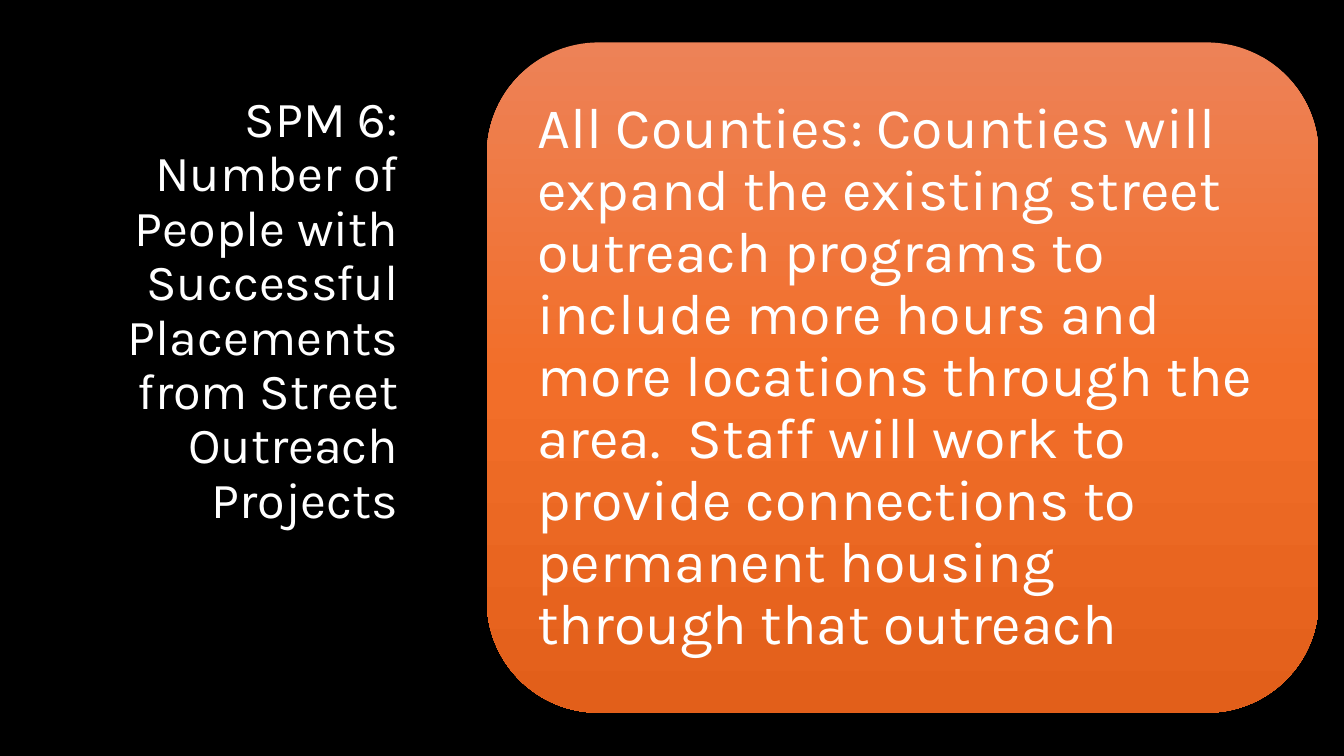
from copy import deepcopy
from dataclasses import dataclass

from pptx import Presentation
from pptx.dml.color import RGBColor
from pptx.enum.shapes import MSO_SHAPE
from pptx.enum.text import MSO_ANCHOR, PP_ALIGN
from pptx.oxml.ns import qn
from pptx.slide import Slide
from pptx.util import Cm, Pt

ROUNDED_RECTANGLE = MSO_SHAPE.ROUNDED_RECTANGLE
BOTTOM, MIDDLE = MSO_ANCHOR.BOTTOM, MSO_ANCHOR.MIDDLE
LEFT, RIGHT = PP_ALIGN.LEFT, PP_ALIGN.RIGHT
BLANK_LAYOUT = 6


@dataclass(frozen=True)
class Theme:
    font: str = "Karla"
    background: str = "000000"
    text: str = "FFFFFF"
    card: tuple[str, ...] = ("ED8257", "F26E29", "E25F1A")
    title_size: int = 36
    body_size: int = 41
    line_spacing: float = 0.9


@dataclass(frozen=True)
class Box:
    left: float
    top: float
    width: float
    height: float

    def lengths(self) -> tuple[Cm, Cm, Cm, Cm]:
        return Cm(self.left), Cm(self.top), Cm(self.width), Cm(self.height)


@dataclass(frozen=True)
class TextBlock:
    text: str
    box: Box
    size: int
    alignment: PP_ALIGN
    anchor: MSO_ANCHOR
    side_margin: float
    top_margin: float
    bottom_margin: float


THEME = Theme()
CARD = Box(12.27, 1.07, 20.96, 16.89)
TEXT_BLOCKS = (
    TextBlock(
        "SPM 6: Number of People with Successful Placements from Street Outreach Projects",
        Box(0.99, 4.83, 9.3, 10.01),
        THEME.title_size, RIGHT, BOTTOM, 0.25, 0.13, 1.5,
    ),
    TextBlock(
        "All Counties: Counties will expand the existing street outreach programs "
        "to include more hours and more locations through the area.  Staff will work "
        "to provide connections to permanent housing through that outreach",
        Box(13.11, 1.91, 19.3, 15.24),
        THEME.body_size, LEFT, MIDDLE, 0.43, 0.43, 0.43,
    ),
)


def draw_card(slide: Slide, box: Box) -> None:
    shape = slide.shapes.add_shape(ROUNDED_RECTANGLE, *box.lengths())
    shape.shadow.inherit = False
    shape.line.fill.background()
    shape.fill.gradient()
    shape.fill.gradient_angle = 270
    stop_list = shape._element.spPr.find(qn("a:gradFill")).find(qn("a:gsLst"))
    stop_list.append(deepcopy(stop_list[0]))
    last = len(THEME.card) - 1
    for index, stop in enumerate(shape.fill.gradient_stops):
        stop.color.rgb = RGBColor.from_string(THEME.card[index])
        stop.position = index / last


def draw_text(slide: Slide, block: TextBlock) -> None:
    shape = slide.shapes.add_textbox(*block.box.lengths())
    frame = shape.text_frame
    frame.word_wrap = True
    frame.vertical_anchor = block.anchor
    frame.margin_left = frame.margin_right = Cm(block.side_margin)
    frame.margin_top = Cm(block.top_margin)
    frame.margin_bottom = Cm(block.bottom_margin)
    frame.text = block.text
    paragraph = frame.paragraphs[0]
    paragraph.alignment = block.alignment
    paragraph.line_spacing = THEME.line_spacing
    font = paragraph.runs[0].font
    font.name = THEME.font
    font.size = Pt(block.size)
    font.color.rgb = RGBColor.from_string(THEME.text)


def main() -> None:
    presentation = Presentation()
    presentation.slide_width = Cm(33.87)
    presentation.slide_height = Cm(19.05)
    slide = presentation.slides.add_slide(presentation.slide_layouts[BLANK_LAYOUT])
    slide.background.fill.solid()
    slide.background.fill.fore_color.rgb = RGBColor.from_string(THEME.background)
    draw_card(slide, CARD)
    for block in TEXT_BLOCKS:
        draw_text(slide, block)
    presentation.save("out.pptx")


if __name__ == "__main__":
    main()
